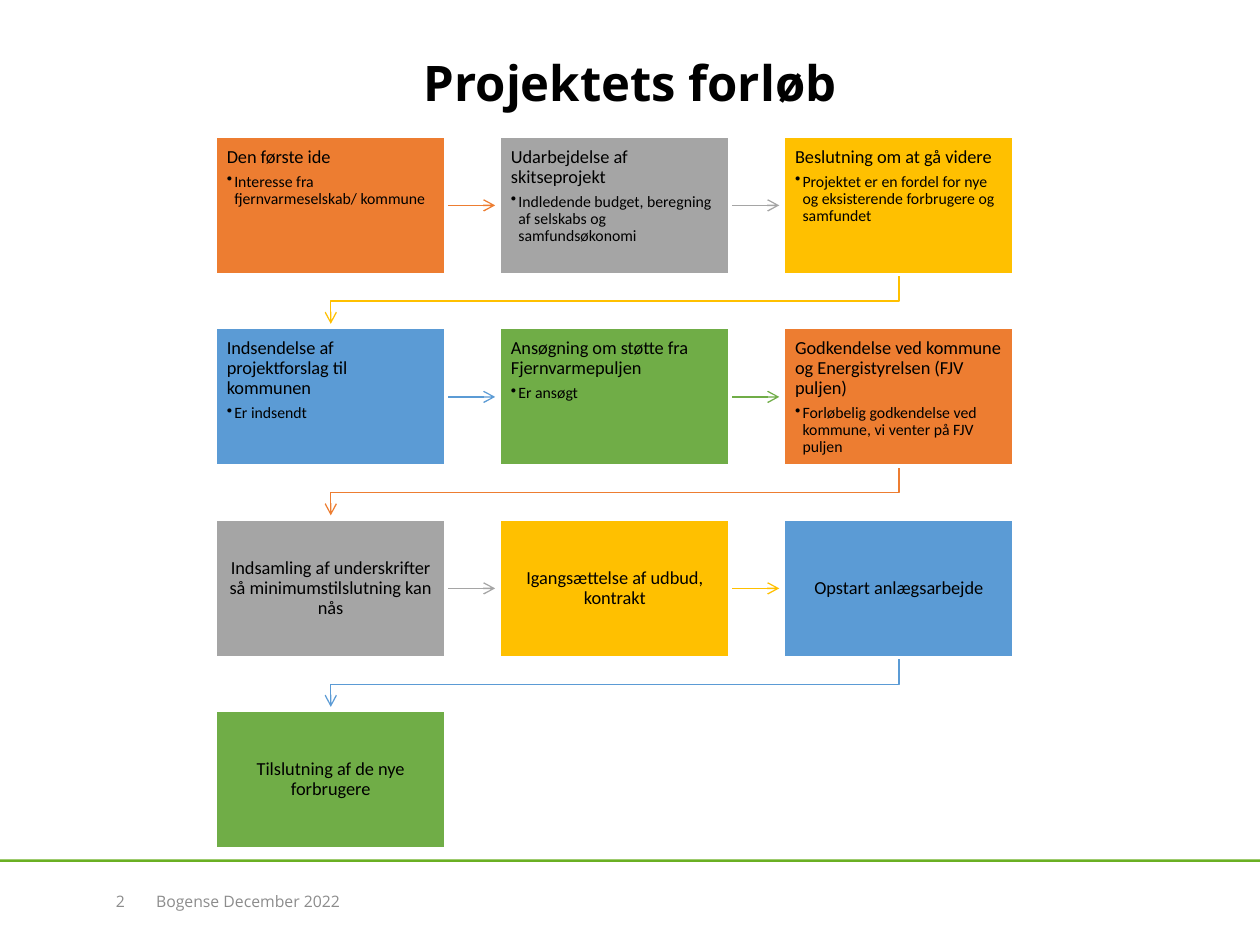
from dataclasses import dataclass

from lxml.etree import SubElement
from pptx import Presentation
from pptx.dml.color import RGBColor
from pptx.enum.shapes import MSO_CONNECTOR as Connector
from pptx.enum.shapes import MSO_SHAPE as Shape
from pptx.enum.text import MSO_ANCHOR as Anchor
from pptx.enum.text import PP_ALIGN as Align
from pptx.oxml.ns import qn
from pptx.util import Inches, Pt


@dataclass(frozen=True)
class Theme:
    """Colours, fonts and type sizes of the slide."""
    orange: str = "ED7D31"
    grey: str = "A5A5A5"
    yellow: str = "FFC000"
    blue: str = "5B9BD5"
    green: str = "70AD47"
    rule: str = "6AB023"
    footer: str = "8C8C8C"
    black: str = "000000"
    white: str = "FFFFFF"
    heading_font: str = "Open Sans"
    step_font: str = "Calibri"
    title_size: float = 28
    step_size: float = 10.5
    detail_size: float = 9
    footer_size: float = 9


THEME = Theme()
STEP_COLOURS = [THEME.orange, THEME.grey, THEME.yellow, THEME.blue, THEME.green]
COLUMNS = 3
LEFT, TOP = 1.71, 1.08
WIDTH, HEIGHT = 1.83, 1.1
COLUMN_PITCH, ROW_PITCH = 2.255, 1.52
ARROW_LENGTH = 0.39

STEPS = [
    ("Den første ide", "Interesse fra fjernvarmeselskab/ kommune"),
    ("Udarbejdelse af skitseprojekt",
     "Indledende budget, beregning af selskabs og samfundsøkonomi"),
    ("Beslutning om at gå videre",
     "Projektet er en fordel for nye og eksisterende forbrugere og samfundet"),
    ("Indsendelse af projektforslag til kommunen", "Er indsendt"),
    ("Ansøgning om støtte fra Fjernvarmepuljen", "Er ansøgt"),
    ("Godkendelse ved kommune og Energistyrelsen (FJV puljen)",
     "Forløbelig godkendelse ved kommune, vi venter på FJV puljen"),
    ("Indsamling af underskrifter så minimumstilslutning kan nås", None),
    ("Igangsættelse af udbud, kontrakt", None),
    ("Opstart anlægsarbejde", None),
    ("Tilslutning af de nye forbrugere", None),
]


def set_values(target, values):
    """Set each named attribute of the target."""
    for name, value in values.items():
        setattr(target, name, value)


def write(paragraph, text, size, font, colour, align=Align.LEFT, bold=False):
    """Put formatted text in a paragraph."""
    paragraph.text = text
    paragraph.alignment = align
    set_values(paragraph.font, {"size": Pt(size), "name": font, "bold": bold})
    paragraph.font.color.rgb = RGBColor.from_string(colour)


def add_bullet(paragraph):
    """Give a paragraph a hanging round bullet."""
    properties = paragraph._p.get_or_add_pPr()
    properties.set("marL", str(Inches(0.06)))
    properties.set("indent", str(Inches(-0.06)))
    SubElement(properties, qn("a:buChar"), char="•")


def add_title(slide, text):
    """Place and format the title placeholder."""
    title = slide.shapes.title
    set_values(title, {"left": Inches(0.5), "top": Inches(0.33),
                       "width": Inches(9), "height": Inches(0.64)})
    title.text_frame.vertical_anchor = Anchor.MIDDLE
    write(title.text_frame.paragraphs[0], text, THEME.title_size,
          THEME.heading_font, THEME.black, Align.CENTER, True)


def add_rectangle(slide, left, top, width, height, colour):
    """Add a filled rectangle without outline or shadow."""
    shape = slide.shapes.add_shape(Shape.RECTANGLE, Inches(left), Inches(top),
                                   Inches(width), Inches(height))
    shape.shadow.inherit = False
    shape.fill.solid()
    shape.fill.fore_color.rgb = RGBColor.from_string(colour)
    shape.line.fill.background()
    return shape


def add_footer_text(slide, left, width, text, align):
    """Add one text box in the footer."""
    box = slide.shapes.add_textbox(Inches(left), Inches(6.95), Inches(width), Inches(0.4))
    set_values(box.text_frame, {"word_wrap": True, "vertical_anchor": Anchor.MIDDLE})
    write(box.text_frame.paragraphs[0], text, THEME.footer_size,
          THEME.heading_font, THEME.footer, align)


def step_position(index):
    """Return the left and top of a step in the grid."""
    row, column = divmod(index, COLUMNS)
    return LEFT + column * COLUMN_PITCH, TOP + row * ROW_PITCH


def add_step(slide, index, heading, detail):
    """Add one step box with its heading and optional detail."""
    box = add_rectangle(slide, *step_position(index), WIDTH, HEIGHT,
                        STEP_COLOURS[index % len(STEP_COLOURS)])
    box.line.color.rgb = RGBColor.from_string(THEME.white)
    box.line.width = Pt(2)
    frame = box.text_frame
    sides = ("left", "top", "right", "bottom")
    set_values(frame, {f"margin_{side}": Inches(0.09) for side in sides})
    set_values(frame, {"word_wrap": True,
                       "vertical_anchor": Anchor.TOP if detail else Anchor.MIDDLE})
    paragraph = frame.paragraphs[0]
    set_values(paragraph, {"line_spacing": 0.9, "space_after": Pt(3.7)})
    write(paragraph, heading, THEME.step_size, THEME.step_font, THEME.black,
          Align.LEFT if detail else Align.CENTER)
    if detail:
        paragraph = frame.add_paragraph()
        set_values(paragraph, {"level": 1, "line_spacing": 0.9, "space_after": Pt(1.35)})
        add_bullet(paragraph)
        write(paragraph, detail, THEME.detail_size, THEME.step_font, THEME.black)
    return box


def style_arrow(arrow, colour):
    """Give a line its colour, width and open arrowhead."""
    arrow.line.color.rgb = RGBColor.from_string(colour)
    arrow.line.width = Pt(0.75)
    properties = arrow._element.spPr
    SubElement(properties.find(qn("a:ln")), qn("a:tailEnd"), type="arrow")
    SubElement(properties, qn("a:effectLst"))


def add_straight_arrow(slide, box):
    """Add an arrow from a box towards the next column."""
    start, middle = box.left + box.width, box.top + box.height // 2
    arrow = slide.shapes.add_connector(Connector.STRAIGHT, start, middle,
                                       start + Inches(ARROW_LENGTH), middle)
    arrow.begin_connect(box, 3)
    return arrow


def add_return_arrow(slide, box):
    """Add a bent arrow from a box to the start of the next row."""
    start_x, bottom = box.left + box.width // 2, box.top + box.height
    end_x = Inches(LEFT + WIDTH / 2)
    bend, end = bottom + Inches(0.21), bottom + Inches(ARROW_LENGTH)
    builder = slide.shapes.build_freeform(start_x, bottom)
    builder.add_line_segments([(start_x, bend), (end_x, bend), (end_x, end)], close=False)
    arrow = builder.convert_to_shape()
    arrow.fill.background()
    return arrow


def add_flow(slide):
    """Add all steps, with each arrow behind the box it leaves."""
    for index, (heading, detail) in enumerate(STEPS):
        box = add_step(slide, index, heading, detail)
        if index == len(STEPS) - 1:
            continue
        ends_row = index % COLUMNS == COLUMNS - 1
        arrow = (add_return_arrow if ends_row else add_straight_arrow)(slide, box)
        style_arrow(arrow, STEP_COLOURS[index % len(STEP_COLOURS)])
        box._element.addprevious(arrow._element)


def main():
    """Build and save the slide."""
    presentation = Presentation()
    set_values(presentation, {"slide_width": Inches(10), "slide_height": Inches(7.5)})
    slide = presentation.slides.add_slide(presentation.slide_layouts[5])
    add_title(slide, "Projektets forløb")
    add_rectangle(slide, 0, 6.82, 10, 0.02, THEME.rule)
    add_footer_text(slide, 1.14, 6.85, "Bogense December 2022", Align.LEFT)
    add_footer_text(slide, 0.51, 0.58, "2", Align.RIGHT)
    add_flow(slide)
    presentation.save("out.pptx")


if __name__ == "__main__":
    main()
